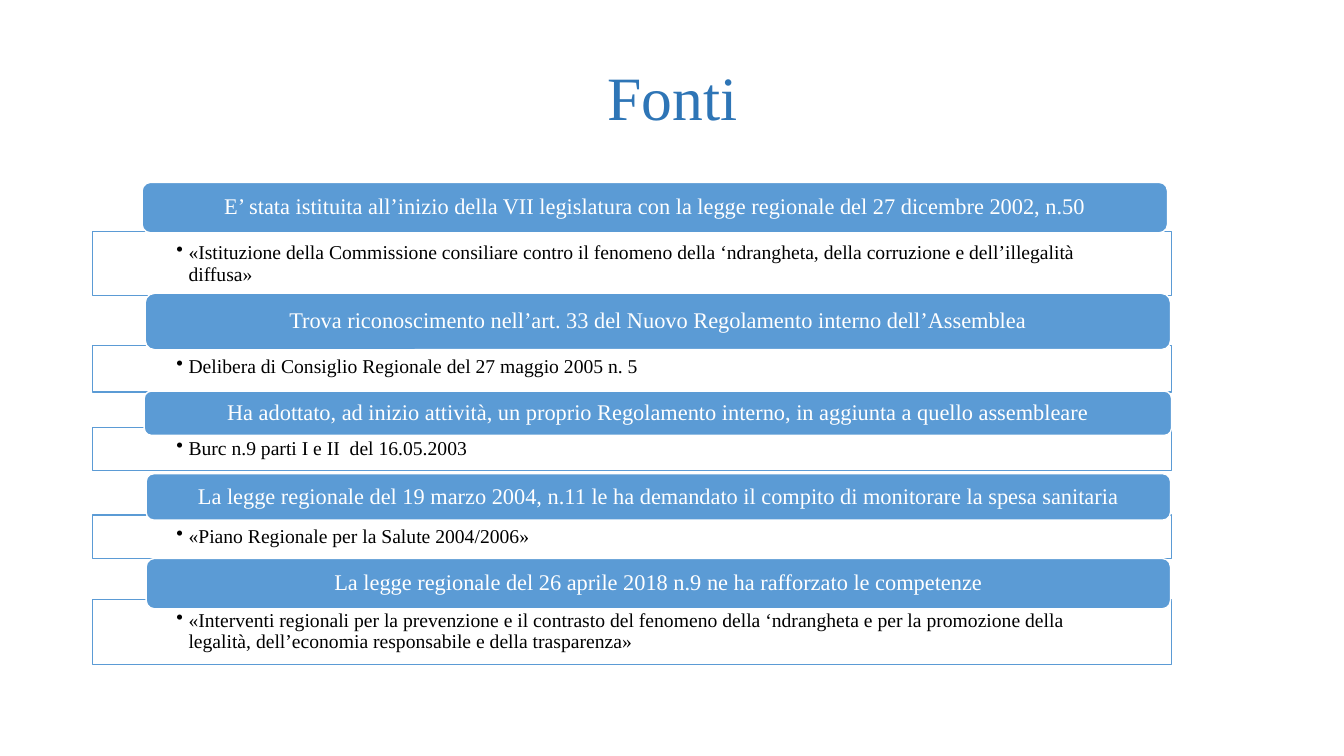
from lxml.etree import SubElement
from pptx import Presentation
from pptx.dml.color import RGBColor
from pptx.enum.shapes import MSO_SHAPE as Shape
from pptx.enum.text import MSO_ANCHOR as Anchor, PP_ALIGN as Align
from pptx.oxml.ns import qn
from pptx.util import Inches, Pt

FONT = "Times New Roman"
TITLE_BLUE = RGBColor(0x2E, 0x75, 0xB6)
BLUE = RGBColor(0x5B, 0x9B, 0xD5)
WHITE = RGBColor(0xFF, 0xFF, 0xFF)
BLACK = RGBColor(0, 0, 0)

DETAIL_LEFT, DETAIL_WIDTH = 0.92, 10.7

# Heading, its (left, top, width, height); detail, its (top, height)
SOURCES = [
    ("E’ stata istituita all’inizio della VII legislatura con la legge regionale "
     "del 27 dicembre 2002, n.50",
     (1.41, 1.81, 10.17, 0.5),
     "«Istituzione della Commissione consiliare contro il fenomeno della "
     "‘ndrangheta, della corruzione e dell’illegalità diffusa»",
     (2.3, 0.63)),
    ("Trova riconoscimento nell’art. 33 del Nuovo Regolamento interno dell’Assemblea",
     (1.44, 2.91, 10.17, 0.56),
     "Delibera di Consiglio Regionale del 27 maggio 2005 n. 5",
     (3.43, 0.46)),
    ("Ha adottato, ad inizio attività, un proprio Regolamento interno, in aggiunta "
     "a quello assembleare",
     (1.43, 3.88, 10.19, 0.44),
     "Burc n.9 parti I e II  del 16.05.2003",
     (4.24, 0.43)),
    ("La legge regionale del 19 marzo 2004, n.11 le ha demandato il compito di "
     "monitorare la spesa sanitaria",
     (1.45, 4.7, 10.16, 0.46),
     "«Piano Regionale per la Salute 2004/2006»",
     (5.11, 0.43)),
    ("La legge regionale del 26 aprile 2018 n.9 ne ha rafforzato le competenze",
     (1.45, 5.54, 10.16, 0.5),
     "«Interventi regionali per la prevenzione e il contrasto del fenomeno della "
     "‘ndrangheta e per la promozione della legalità, dell’economia responsabile "
     "e della trasparenza»",
     (5.95, 0.64)),
]


def write_text(shape, text, size, color, align, anchor, side_inset, top_inset):
    frame = shape.text_frame
    frame.word_wrap = True
    frame.vertical_anchor = anchor
    frame.margin_left = frame.margin_right = Inches(side_inset)
    frame.margin_top = frame.margin_bottom = Inches(top_inset)
    paragraph = frame.paragraphs[0]
    paragraph.alignment = align
    paragraph.line_spacing = 0.9
    run = paragraph.add_run()
    run.text = text
    run.font.name = FONT
    run.font.size = Pt(size)
    run.font.color.rgb = color
    return paragraph


def add_bullet(paragraph, indent):
    properties = paragraph._p.get_or_add_pPr()
    properties.set("marL", str(Inches(indent)))
    properties.set("indent", str(-Inches(indent)))
    SubElement(properties, qn("a:buChar"), char="•")


def add_box(slide, kind, bounds, fill, line):
    box = slide.shapes.add_shape(kind, *map(Inches, bounds))
    box.shadow.inherit = False
    box.fill.solid()
    box.fill.fore_color.rgb = fill
    box.line.color.rgb = line
    box.line.width = Pt(1)
    return box


def add_title(slide, text):
    title = slide.shapes.add_textbox(*map(Inches, (0.92, 0.4, 11.5, 1.2)))
    write_text(title, text, 44, TITLE_BLUE, Align.CENTER, Anchor.MIDDLE, 0.1, 0.05)


def add_detail(slide, text, top, height):
    bounds = (DETAIL_LEFT, top, DETAIL_WIDTH, height)
    box = add_box(slide, Shape.RECTANGLE, bounds, WHITE, BLUE)
    paragraph = write_text(box, text, 14, BLACK, Align.LEFT, Anchor.TOP, 0.83, 0.11)
    add_bullet(paragraph, 0.12)


def add_heading(slide, text, bounds):
    box = add_box(slide, Shape.ROUNDED_RECTANGLE, bounds, BLUE, WHITE)
    write_text(box, text, 16, WHITE, Align.CENTER, Anchor.MIDDLE, 0.28, 0)


def main():
    presentation = Presentation()
    presentation.slide_width = Inches(13.33)
    presentation.slide_height = Inches(7.5)
    slide = presentation.slides.add_slide(presentation.slide_layouts[6])
    add_title(slide, "Fonti")
    for heading, heading_bounds, detail, (top, height) in SOURCES:
        add_detail(slide, detail, top, height)
        add_heading(slide, heading, heading_bounds)
    presentation.save("out.pptx")


if __name__ == "__main__":
    main()
